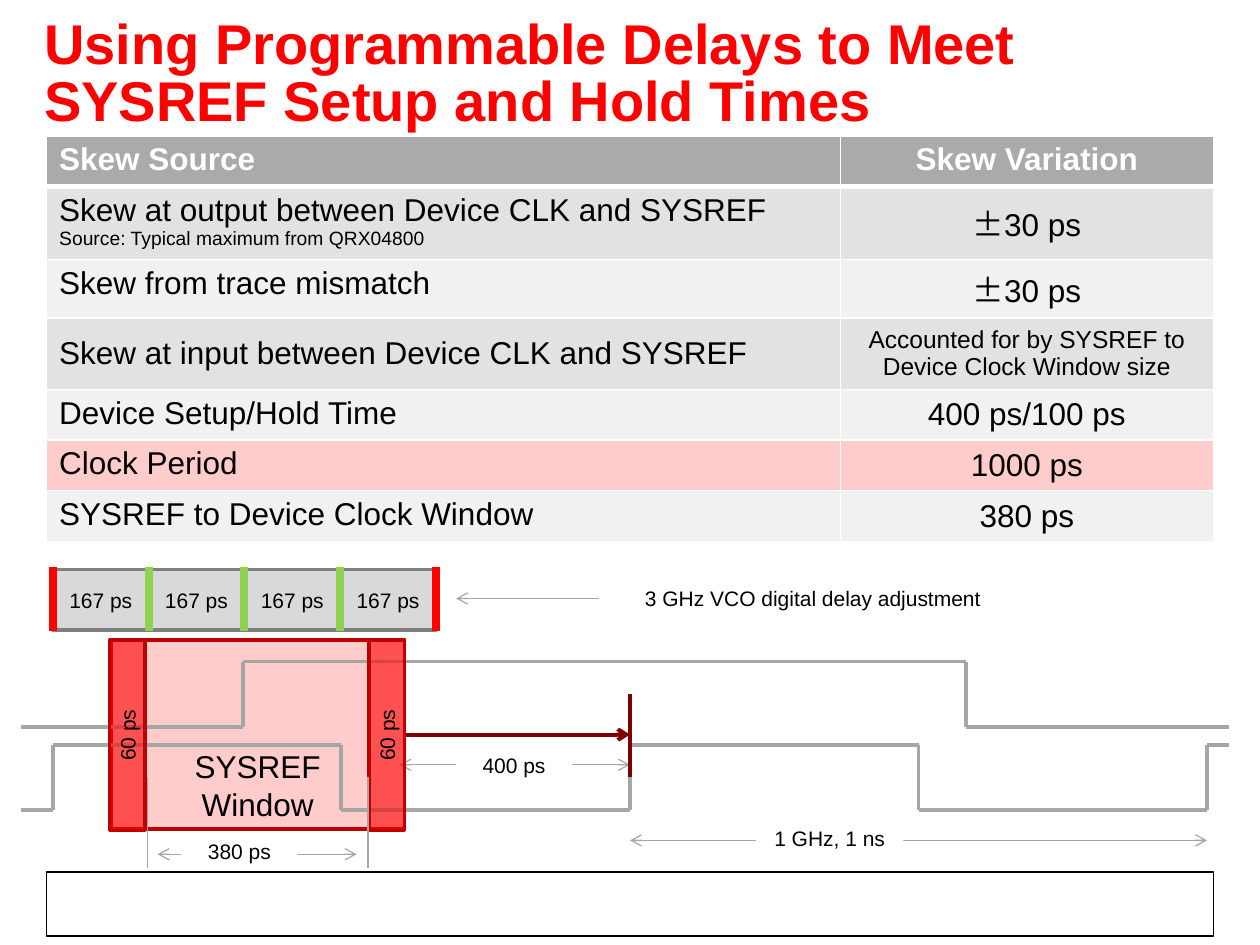
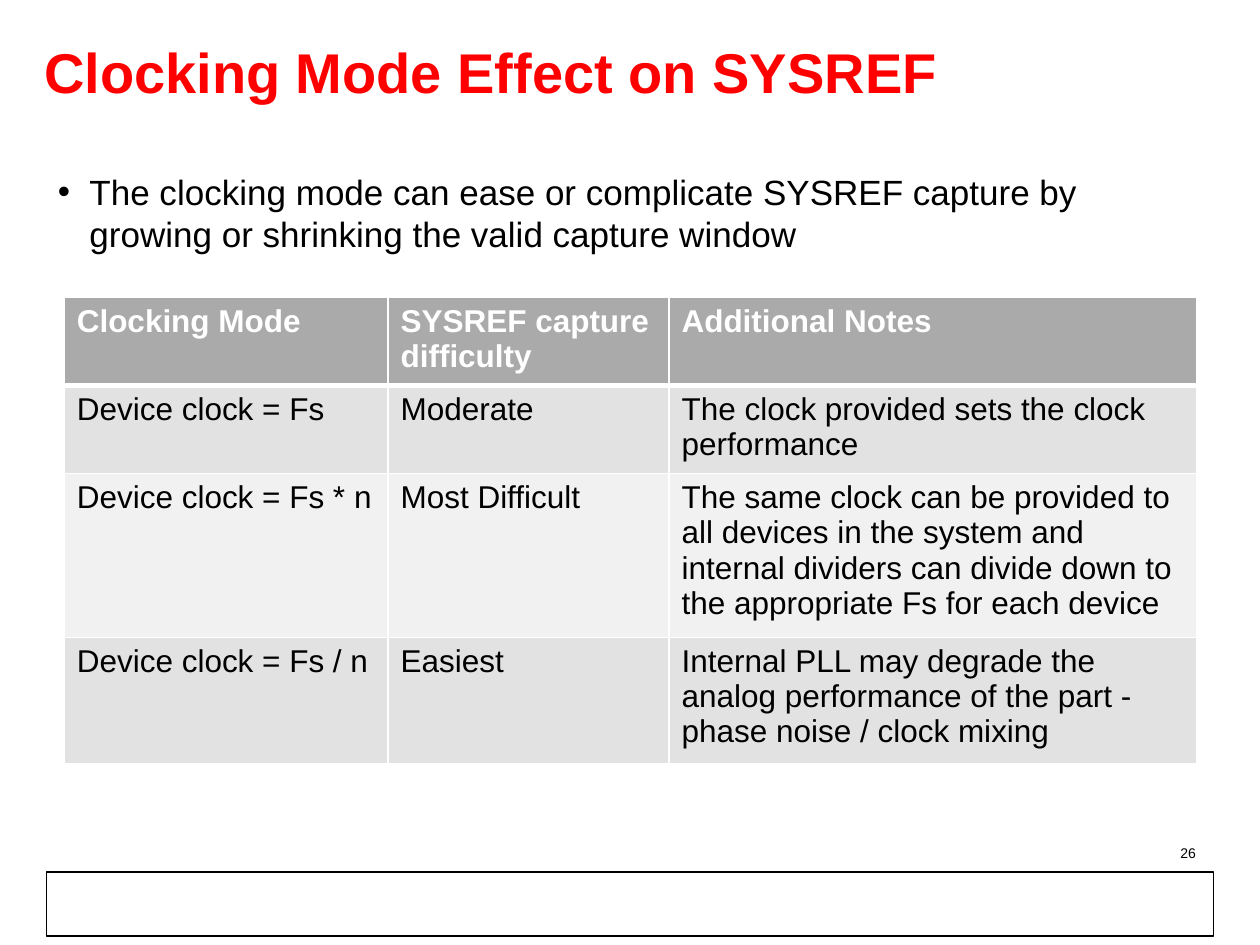
from itertools import pairwise

from lxml import etree
from pptx import Presentation
from pptx.dml.color import RGBColor
from pptx.enum.shapes import MSO_CONNECTOR, MSO_SHAPE
from pptx.enum.text import MSO_ANCHOR, MSO_AUTO_SIZE, PP_ALIGN
from pptx.oxml.ns import qn
from pptx.util import Inches, Pt

RECT, LINE = MSO_SHAPE.RECTANGLE, MSO_CONNECTOR.STRAIGHT
TOP, MIDDLE, BOTTOM = MSO_ANCHOR.TOP, MSO_ANCHOR.MIDDLE, MSO_ANCHOR.BOTTOM
LEFT, CENTER, RIGHT = PP_ALIGN.LEFT, PP_ALIGN.CENTER, PP_ALIGN.RIGHT

BLACK = RGBColor(0, 0, 0)
WHITE = RGBColor(255, 255, 255)
RED = RGBColor(255, 0, 0)
CRIMSON = RGBColor(0xC0, 0, 0)
MAROON = RGBColor(0x80, 0, 0)
GREEN = RGBColor(0x92, 0xD0, 0x50)
GRAY = RGBColor(0xA6, 0xA6, 0xA6)
DARK = RGBColor(0x7E, 0x7E, 0x7E)
PALE = RGBColor(0xD9, 0xD9, 0xD9)
HEAD = RGBColor(0xAA, 0xAA, 0xAA)
BANDS = [RGBColor(0xF1, 0xF1, 0xF1), RGBColor(0xE2, 0xE2, 0xE2)]
PINK = RGBColor(0xFF, 0xCC, 0xCC)
FONT, SIGN = "Arial", "Noto Sans CJK KR"


def box(slide, at, text="", fill=None, edge=None, width=2, size=12,
        alpha=None, anchor=TOP, align=CENTER, turn=False):
    """Add a rectangle, or a plain text box if it has no fill and no edge."""
    at = [Inches(v) for v in at]
    if fill is None and edge is None:
        shape = slide.shapes.add_textbox(*at)
    else:
        shape = slide.shapes.add_shape(RECT, *at)
        shape.shadow.inherit = False
    if fill is None:
        shape.fill.background()
    else:
        shape.fill.solid()
        shape.fill.fore_color.rgb = fill
    if alpha:
        tint = shape.element.spPr.find(qn("a:solidFill"))[0]
        etree.SubElement(tint, qn("a:alpha"), val=str(alpha * 1000))
    if edge is None:
        shape.line.fill.background()
    else:
        shape.line.color.rgb = edge
        shape.line.width = Pt(width)
    frame = shape.text_frame
    frame.word_wrap = True
    frame.vertical_anchor = anchor
    if turn:
        shape.element.txBody.bodyPr.set("vert", "vert270")
    frame.text = text
    for para in frame.paragraphs:
        para.alignment = align
        para.font.name = FONT
        para.font.size = Pt(size)
        para.font.color.rgb = BLACK


def wire(slide, points, color=GRAY, width=2.25, ends=()):
    """Join points with straight lines; ends may hold headEnd and tailEnd."""
    for start, stop in pairwise(points):
        line = slide.shapes.add_connector(
            LINE, *[Inches(v) for v in (*start, *stop)])
        line.line.color.rgb = color
        line.line.width = Pt(width)
        for end in ends:
            etree.SubElement(line.line._get_or_add_ln(), qn(f"a:{end}"),
                             type="arrow")
        etree.SubElement(line.element.spPr, qn("a:effectLst"))


deck = Presentation()
deck.slide_width, deck.slide_height = Inches(10), Inches(7.5)

# Title, layout, table corner, columns, rows, cells
pages = [
    ("Using Programmable Delays to Meet SYSREF Setup and Hold Times", 5,
     (0.37, 1.08), (6.3, 2.96), (0.4, 0.58, 0.41, 0.57, 0.4, 0.4, 0.41), [
         ("Skew Source", "Skew Variation"),
         ("Skew at output between Device CLK and SYSREF\n"
          "Source: Typical maximum from QRX04800", "±30 ps"),
         ("Skew from trace mismatch", "±30 ps"),
         ("Skew at input between Device CLK and SYSREF",
          "Accounted for by SYSREF to Device Clock Window size"),
         ("Device Setup/Hold Time", "400 ps/100 ps"),
         ("Clock Period", "1000 ps"),
         ("SYSREF to Device Clock Window", "380 ps")]),
    ("Clocking Mode Effect on SYSREF", 1,
     (0.51, 2.36), (2.57, 2.23, 4.19), (0.7, 0.7, 1.3, 1), [
         ("Clocking Mode", "SYSREF capture difficulty",
          "Additional Notes"),
         ("Device clock = Fs", "Moderate",
          "The clock provided sets the clock performance"),
         ("Device clock = Fs * n", "Most Difficult",
          "The same clock can be provided to all devices in the system and "
          "internal dividers can divide down to the appropriate Fs for each "
          "device"),
         ("Device clock = Fs / n", "Easiest",
          "Internal PLL may degrade the analog performance of the part - "
          "phase noise / clock mixing")]),
]

grids = []
for name, layout, spot, cols, rows, cells in pages:
    slide = deck.slides.add_slide(deck.slide_layouts[layout])
    box(slide, (0.37, 6.92, 9.26, 0.51), edge=BLACK, width=0.75)

    title = slide.shapes.title
    title.left, title.top = Inches(0.25), Inches(0.16)
    title.width, title.height = Inches(9.25), Inches(0.89)
    frame = title.text_frame
    frame.text = name
    frame.auto_size = MSO_AUTO_SIZE.NONE
    frame.vertical_anchor = MIDDLE
    para = frame.paragraphs[0]
    para.alignment = LEFT
    para.line_spacing = 0.85
    para.font.name = FONT
    para.font.size = Pt(32)
    para.font.bold = True
    para.font.color.rgb = RED

    size = (sum(cols), sum(rows))
    grid = slide.shapes.add_table(
        len(rows), len(cols), *[Inches(v) for v in spot + size]).table
    grids.append(grid)
    for col, wide in zip(grid.columns, cols):
        col.width = Inches(wide)
    for r, (row, high) in enumerate(zip(grid.rows, rows)):
        row.height = Inches(high)
        for cell, text in zip(row.cells, cells[r]):
            props = cell._tc.get_or_add_tcPr()
            for side in ("lnL", "lnR", "lnT", "lnB"):
                thick = (r, side) in ((0, "lnB"), (1, "lnT"))
                edge = etree.SubElement(props, qn(f"a:{side}"),
                                        w=str(Pt(3 if thick else 1)))
                paint = etree.SubElement(edge, qn("a:solidFill"))
                etree.SubElement(paint, qn("a:srgbClr"), val=str(WHITE))
            cell.fill.solid()
            cell.fill.fore_color.rgb = BANDS[r % 2] if r else HEAD
            cell.text = text
            for para in cell.text_frame.paragraphs:
                para.font.name = FONT
                para.font.size = Pt(18)
                para.font.bold = r == 0
                para.font.color.rgb = BLACK if r else WHITE

# Skew table: centred values, small notes, marked clock period
skew, modes = grids
for r in range(len(skew.rows)):
    cell = skew.cell(r, 1)
    cell.vertical_anchor = MIDDLE if r else TOP
    para = cell.text_frame.paragraphs[0]
    para.alignment = CENTER
    if para.text.startswith("±"):
        rest = para.text[1:]
        run = para.runs[0]
        run.text = "±"
        run.font.name = SIGN
        etree.SubElement(run.font._element, qn("a:ea"), typeface=SIGN)
        para.add_run().text = rest
skew.cell(1, 0).text_frame.paragraphs[1].font.size = Pt(11)
skew.cell(3, 0).vertical_anchor = MIDDLE
skew.cell(3, 1).text_frame.paragraphs[0].font.size = Pt(14)
for cell in skew.rows[5].cells:
    cell.fill.fore_color.rgb = PINK

# Timing diagram
first, second = deck.slides
BOTH = ("headEnd", "tailEnd")
box(first, (0.88, 5.08, 2.33, 1.5), "SYSREF\nWindow", RED, CRIMSON,
    size=18, alpha=20, anchor=BOTTOM)

high, low, half = 5.91, 6.43, 2.29
clock = [(0.17, low)]
for n in range(5):
    edge = 0.42 + n * half
    clock += [(edge, high), (edge, low)] if n % 2 else \
        [(edge, low), (edge, high)]
clock.append((9.75, high))
wire(first, clock)

spans = [(5, 9.58, 6.67, "1 GHz, 1 ns", (6, 6.5, 1.17, 0.3)),
         (3.17, 5, 6.07, "400 ps", (3.62, 5.92, 0.92, 0.3)),
         (1.25, 2.83, 6.78, "380 ps", (1.44, 6.61, 0.92, 0.3))]
for start, stop, y, text, at in spans:
    wire(first, [(start, y), (stop, y)], width=0.75, ends=BOTH)
    box(first, at, text, WHITE)

step = 0.76
for n in range(4):
    box(first, (0.42 + n * step, 4.52, step, 0.48), "167 ps", PALE, DARK,
        anchor=MIDDLE)
for n in range(5):
    x = 0.42 + n * step
    wire(first, [(x, 4.5), (x, 5.01)], GREEN if 0 < n < 4 else RED, 4.5)

wire(first, [(3.2, 5.83), (5, 5.83)], MAROON, ends=("tailEnd",))
wire(first, [(5, 6.17), (5, 5.51)], MAROON)
box(first, (5.02, 4.6, 3.42, 0.3), "3 GHz VCO digital delay adjustment",
    align=LEFT)
wire(first, [(4.75, 4.75), (3.62, 4.75)], width=0.75, ends=("tailEnd",))
wire(first, [(0.17, 5.77), (1.93, 5.77), (1.93, 5.25), (7.67, 5.25),
             (7.67, 5.77), (9.75, 5.77)])
for x in (0.87, 2.93):
    box(first, (x, 5.08, 0.28, 1.51), "60 ps", RED, CRIMSON, alpha=60,
        anchor=MIDDLE, turn=True)
for x in (1.17, 2.92):
    wire(first, [(x, 6.17), (x, 6.89)], width=0.75)

# Clocking mode list and page number
body = second.placeholders[1]
body.left, body.top = Inches(0.36), Inches(1.3)
body.width, body.height = Inches(9.26), Inches(5.13)
frame = body.text_frame
frame.text = ("The clocking mode can ease or complicate SYSREF capture by "
              "growing or shrinking the valid capture window")
frame.auto_size = MSO_AUTO_SIZE.NONE
para = frame.paragraphs[0]
props = para._p.get_or_add_pPr()
props.set("marL", str(Inches(0.25)))
props.set("indent", str(-Inches(0.25)))
etree.SubElement(props, qn("a:buChar"), char="•")
para.space_before = Pt(0)
para.font.name = FONT
para.font.size = Pt(20)
para.font.color.rgb = BLACK
box(second, (7.26, 6.65, 2.33, 0.23), "26", size=8, align=RIGHT)

deck.save("out.pptx")
